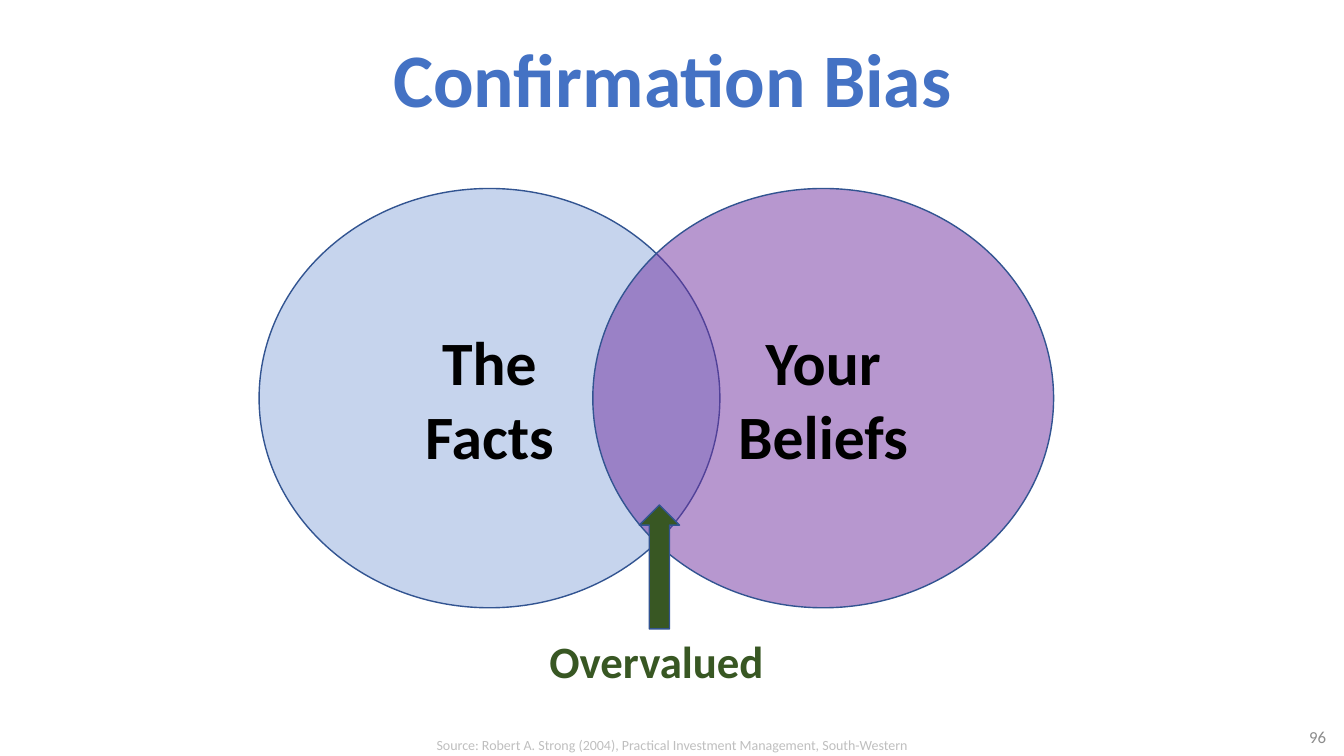
"""Build the Confirmation Bias slide: two overlapping ellipses with a labelled arrow."""
from lxml.etree import SubElement
from pptx import Presentation
from pptx.dml.color import RGBColor
from pptx.enum.shapes import MSO_SHAPE as Shape
from pptx.enum.text import MSO_ANCHOR as Anchor, PP_ALIGN as Align
from pptx.oxml.ns import qn
from pptx.util import Inches, Pt

COLORS = {
    "title": "4472C4", "facts": "8FAADC", "beliefs": "7030A0", "outline": "325491",
    "overvalued": "385723", "ink": "000000", "source": "BFBFBF", "number": "8C8C8C",
}
ELLIPSES = [("The\nFacts", "facts"), ("Your\vBeliefs", "beliefs")]
ELLIPSE_LEFT, ELLIPSE_TOP, ELLIPSE_STEP = 2.57, 1.87, 3.31
ELLIPSE_SIZE = (4.57, 4.16)
ARROW = (6.34, 5.01, 0.4, 1.23)
LABELS = [
    ("96", (12.2, 7.18, 1.05, 0.26), 12, "number", False, Align.RIGHT, Anchor.MIDDLE, True),
    ("Confirmation Bias", (2.17, 0.14, 9, 1.25), 54, "title", True, Align.CENTER, Anchor.MIDDLE, True),
    ("Source: Robert A. Strong (2004), Practical Investment Management, South-Western",
     (3.45, 7.26, 6.43, 0.27), 10, "source", False, Align.CENTER, Anchor.TOP, True),
    ("Overvalued", (5.35, 6.24, 2.35, 0.64), 32, "overvalued", True, Align.LEFT, Anchor.TOP, False),
]


def color(name):
    return RGBColor.from_string(COLORS[name])


def write(box, text, size, ink, bold, align, anchor, wrap=True):
    frame = box.text_frame
    frame.text = text
    frame.word_wrap = wrap
    frame.vertical_anchor = anchor
    for para in frame.paragraphs:
        para.alignment = align
        para.font.name = "Calibri"
        para.font.size = Pt(size)
        para.font.bold = bold
        para.font.color.rgb = color(ink)


def add_figure(page, kind, place, fill, opacity=100):
    figure = page.shapes.add_shape(kind, *map(Inches, place))
    figure.shadow.inherit = False
    figure.fill.solid()
    figure.fill.fore_color.rgb = color(fill)
    figure.line.color.rgb = color("outline")
    figure.line.width = Pt(1)
    if opacity < 100:
        tint = figure.element.spPr.find(qn("a:solidFill"))[0]
        SubElement(tint, qn("a:alpha"), val=str(opacity * 1000))
    return figure


def main():
    deck = Presentation()
    deck.slide_width, deck.slide_height = Inches(13.33), Inches(7.5)
    page = deck.slides.add_slide(deck.slide_layouts[6])
    for index, (text, fill) in enumerate(ELLIPSES):
        place = (ELLIPSE_LEFT + index * ELLIPSE_STEP, ELLIPSE_TOP, *ELLIPSE_SIZE)
        ellipse = add_figure(page, Shape.OVAL, place, fill, 50)
        write(ellipse, text, 44, "ink", True, Align.CENTER, Anchor.MIDDLE)
    for text, place, *style in LABELS:
        write(page.shapes.add_textbox(*map(Inches, place)), text, *style)
    add_figure(page, Shape.UP_ARROW, ARROW, "overvalued")
    deck.save("out.pptx")


if __name__ == "__main__":
    main()
